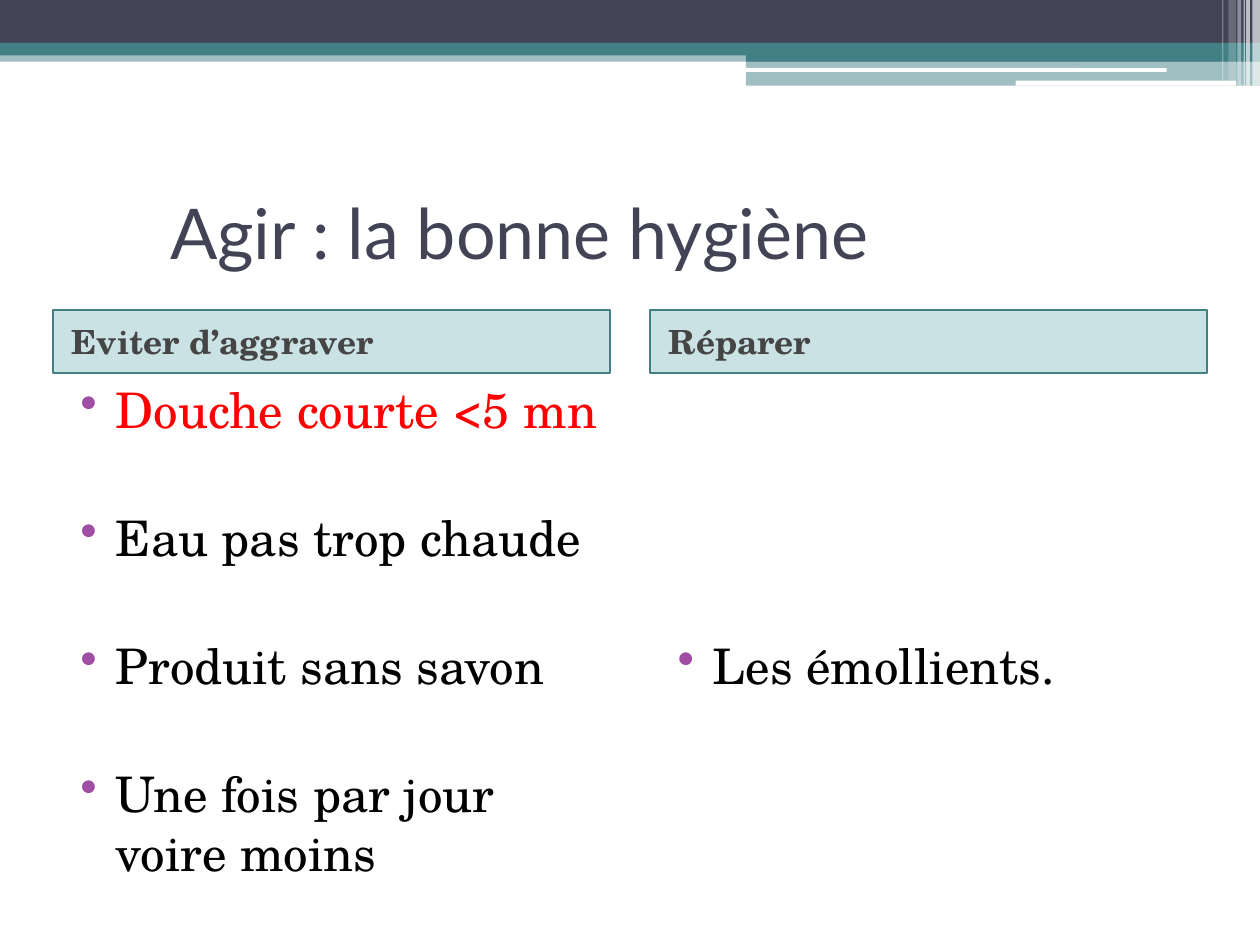
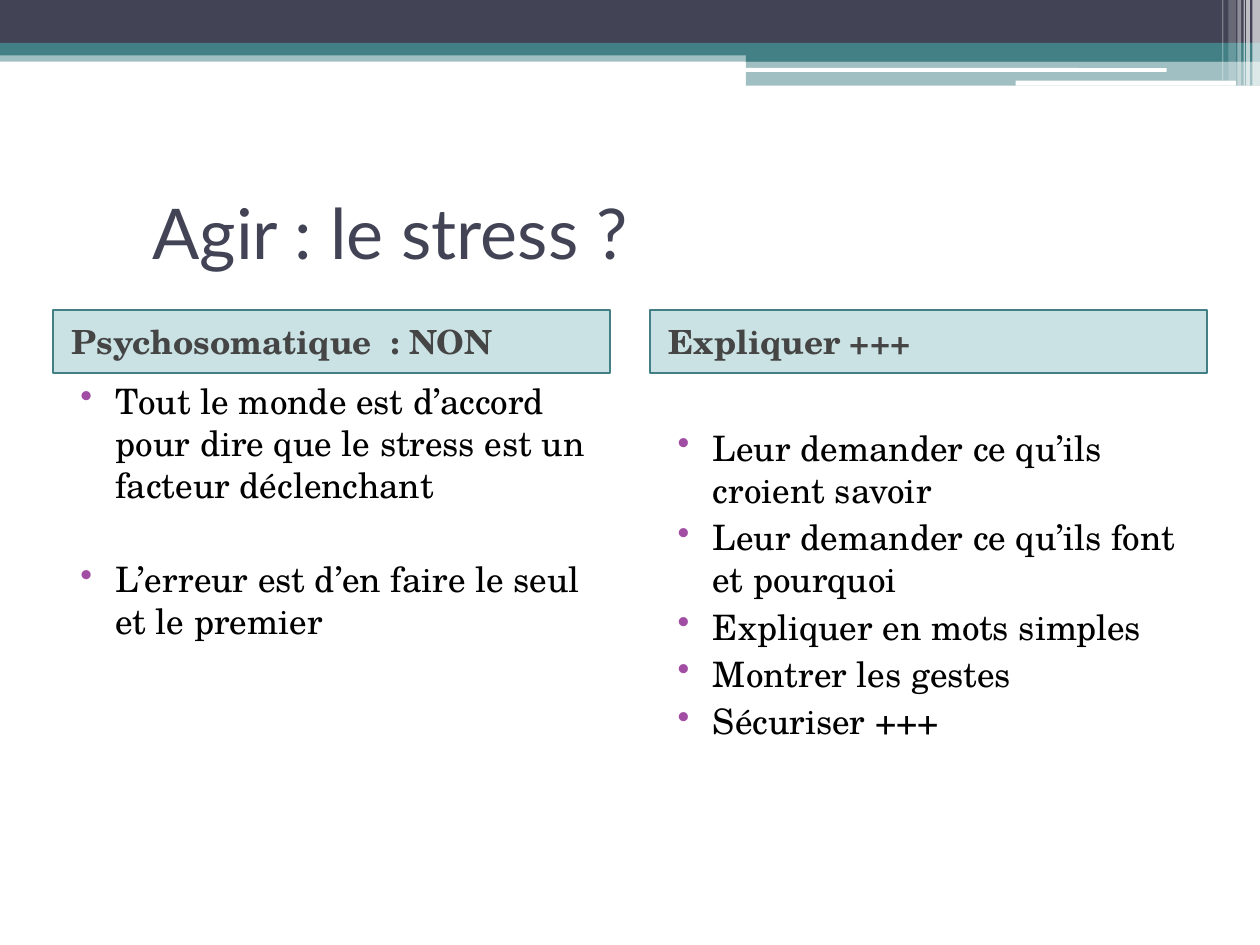
from lxml.etree import SubElement
from pptx import Presentation
from pptx.dml.color import RGBColor
from pptx.enum.shapes import MSO_SHAPE
from pptx.enum.text import MSO_ANCHOR, PP_ALIGN
from pptx.oxml.ns import qn
from pptx.util import Inches, Pt

NAVY, TEAL, WHITE = "424456", "438086", "FFFFFF"
HEADER_FILL, HEADER_TEXT = "328E97", "454545"
BLACK, RED, PURPLE = "000000", "FF0000", "A04DA3"
TITLE_FONT, BODY_FONT = "Lato", "TeX Gyre Schola"

# "lead" counts the empty lines above a list; "spread" puts one between its items.
SLIDES = [
    {
        "title": "Agir : la bonne hygiène", "title_indent": 0.83, "size": 28,
        "columns": [
            {"header": "Eviter d’aggraver", "lead": 0, "spread": True,
             "items": [("Douche courte <5 mn", RED), ("Eau pas trop chaude", BLACK),
                       ("Produit sans savon", BLACK),
                       ("Une fois par jour voire moins", BLACK)]},
            {"header": "Réparer", "lead": 4, "spread": False,
             "items": [("Les émollients.", BLACK)]},
        ],
    },
    {
        "title": "Agir : le stress ?", "title_indent": 0.69, "size": 20,
        "columns": [
            {"header": "Psychosomatique  : NON", "lead": 0, "spread": True,
             "items": [("Tout le monde est d’accord pour dire que le stress est un "
                        "facteur déclenchant", BLACK),
                       ("L’erreur est d’en faire le seul et le premier", BLACK)]},
            {"header": "Expliquer +++", "lead": 1, "spread": False,
             "items": [("Leur demander ce qu’ils croient savoir", BLACK),
                       ("Leur demander ce qu’ils font et pourquoi", BLACK),
                       ("Expliquer en mots simples", BLACK),
                       ("Montrer les gestes", BLACK),
                       ("Sécuriser +++", BLACK)]},
        ],
    },
]

# left, top, width, height, colour, opacity in percent
BANDS = [
    (0, 0.4, 10, 0.09, TEAL, 50),
    (0, 0, 10, 0.34, NAVY, 100),
    (0, 0.34, 10, 0.1, TEAL, 100),
    (5.92, 0.39, 4.08, 0.1, TEAL, 100),
    (5.92, 0.48, 4.08, 0.2, TEAL, 50),
]
ROUNDED_BARS = [
    (5.91, 0.54, 3.35, 0.03, WHITE, 100),
    (8.06, 0.64, 1.75, 0.04, WHITE, 100),
]
# left, width, height, opacity in percent
STRIPES = [
    (9.94, 0.06, 0.68, 65), (9.89, 0.03, 0.68, 65), (9.87, 0.01, 0.68, 60),
    (9.82, 0.03, 0.68, 40), (9.75, 0.06, 0.64, 20), (9.7, 0.01, 0.64, 30),
]

SLIDE_WIDTH, SLIDE_HEIGHT = 10, 7.5
MARGIN, COLUMN_GAP = 0.42, 0.32
COLUMN_WIDTH = (SLIDE_WIDTH - 2 * MARGIN - COLUMN_GAP) / 2
TITLE_TOP, TITLE_HEIGHT = 1.25, 1.17
HEADER_TOP, HEADER_HEIGHT = 2.46, 0.5
LIST_TOP, LIST_HEIGHT = HEADER_TOP + HEADER_HEIGHT, 4.25
INSET_TOP, SPACE_BEFORE, LINE_RATIO = 3.6, 3, 1.2


def color(value):
    return RGBColor.from_string(value)


def inches(*lengths):
    return [Inches(length) for length in lengths]


def format_font(font, value, **settings):
    for name, setting in settings.items():
        setattr(font, name, setting)
    font.color.rgb = color(value)


def add_block(slide, kind, box, fill, opacity=100, line=None):
    shape = slide.shapes.add_shape(kind, *inches(*box))
    shape.shadow.inherit = False
    shape.fill.solid()
    shape.fill.fore_color.rgb = color(fill)
    if opacity < 100:
        fill_color = shape.element.spPr.find(qn("a:solidFill"))[0]
        SubElement(fill_color, qn("a:alpha"), val=str(opacity * 1000))
    if line:
        shape.line.color.rgb = color(line)
        shape.line.width = Pt(1)
    else:
        shape.line.fill.background()
    return shape


def move_bands_to_layout(slide, layout):
    """Draw the top decoration and hand it to the layout that both slides share."""
    stripes = [(left, 0, width, height, WHITE, opacity)
               for left, width, height, opacity in STRIPES]
    pieces = [(MSO_SHAPE.RECTANGLE, band) for band in BANDS]
    pieces += [(MSO_SHAPE.ROUNDED_RECTANGLE, bar) for bar in ROUNDED_BARS]
    pieces += [(MSO_SHAPE.RECTANGLE, stripe) for stripe in stripes]
    for number, (kind, (*box, fill, opacity)) in enumerate(pieces, start=101):
        shape = add_block(slide, kind, box, fill, opacity)
        shape.element.nvSpPr.cNvPr.set("id", str(number))
        layout.shapes.element.append(shape.element)


def set_indent(paragraph, left, first=0):
    properties = paragraph._p.get_or_add_pPr()
    properties.set("marL", str(Inches(left)))
    properties.set("indent", str(Inches(first)))
    return properties


def set_title(slide, text, indent):
    title = slide.shapes.title
    box = inches(MARGIN, TITLE_TOP, SLIDE_WIDTH - 2 * MARGIN, TITLE_HEIGHT)
    for name, length in zip(("left", "top", "width", "height"), box):
        setattr(title, name, length)
    title.text_frame.text = text
    title.text_frame.vertical_anchor = MSO_ANCHOR.MIDDLE
    paragraph = title.text_frame.paragraphs[0]
    paragraph.alignment = PP_ALIGN.LEFT
    set_indent(paragraph, indent)
    format_font(paragraph.runs[0].font, NAVY, name=TITLE_FONT, size=Pt(40))


def add_header(slide, left, text):
    header = add_block(slide, MSO_SHAPE.RECTANGLE,
                       (left, HEADER_TOP, COLUMN_WIDTH, HEADER_HEIGHT),
                       HEADER_FILL, 25, TEAL)
    frame = header.text_frame
    frame.text = text
    frame.vertical_anchor = MSO_ANCHOR.MIDDLE
    paragraph = frame.paragraphs[0]
    paragraph.alignment = PP_ALIGN.LEFT
    paragraph.space_before = Pt(SPACE_BEFORE)
    set_indent(paragraph, 0.05)
    format_font(paragraph.runs[0].font, HEADER_TEXT,
                name=BODY_FONT, size=Pt(19), bold=True)


def add_list(slide, left, column, size):
    box = slide.shapes.add_textbox(*inches(left, LIST_TOP, COLUMN_WIDTH, LIST_HEIGHT))
    frame = box.text_frame
    frame.word_wrap = True
    empty_line = size * LINE_RATIO + SPACE_BEFORE
    frame.margin_top = Pt(INSET_TOP + column["lead"] * empty_line)
    for index, (text, text_color) in enumerate(column["items"]):
        paragraph = frame.add_paragraph() if index else frame.paragraphs[0]
        extra = empty_line if index and column["spread"] else 0
        paragraph.space_before = Pt(SPACE_BEFORE + extra)
        properties = set_indent(paragraph, 0.4, -0.28)
        bullet_color = SubElement(properties, qn("a:buClr"))
        SubElement(bullet_color, qn("a:srgbClr"), val=PURPLE)
        SubElement(properties, qn("a:buChar"), char="•")
        run = paragraph.add_run()
        run.text = text
        format_font(run.font, text_color, name=BODY_FONT, size=Pt(size))


def main():
    presentation = Presentation()
    presentation.slide_width, presentation.slide_height = inches(SLIDE_WIDTH, SLIDE_HEIGHT)
    layout = presentation.slide_layouts.get_by_name("Title Only")
    for number, content in enumerate(SLIDES):
        slide = presentation.slides.add_slide(layout)
        if number == 0:
            move_bands_to_layout(slide, layout)
        set_title(slide, content["title"], content["title_indent"])
        for position, column in enumerate(content["columns"]):
            left = MARGIN + position * (COLUMN_WIDTH + COLUMN_GAP)
            add_header(slide, left, column["header"])
            add_list(slide, left, column, content["size"])
    presentation.save("out.pptx")


if __name__ == "__main__":
    main()
